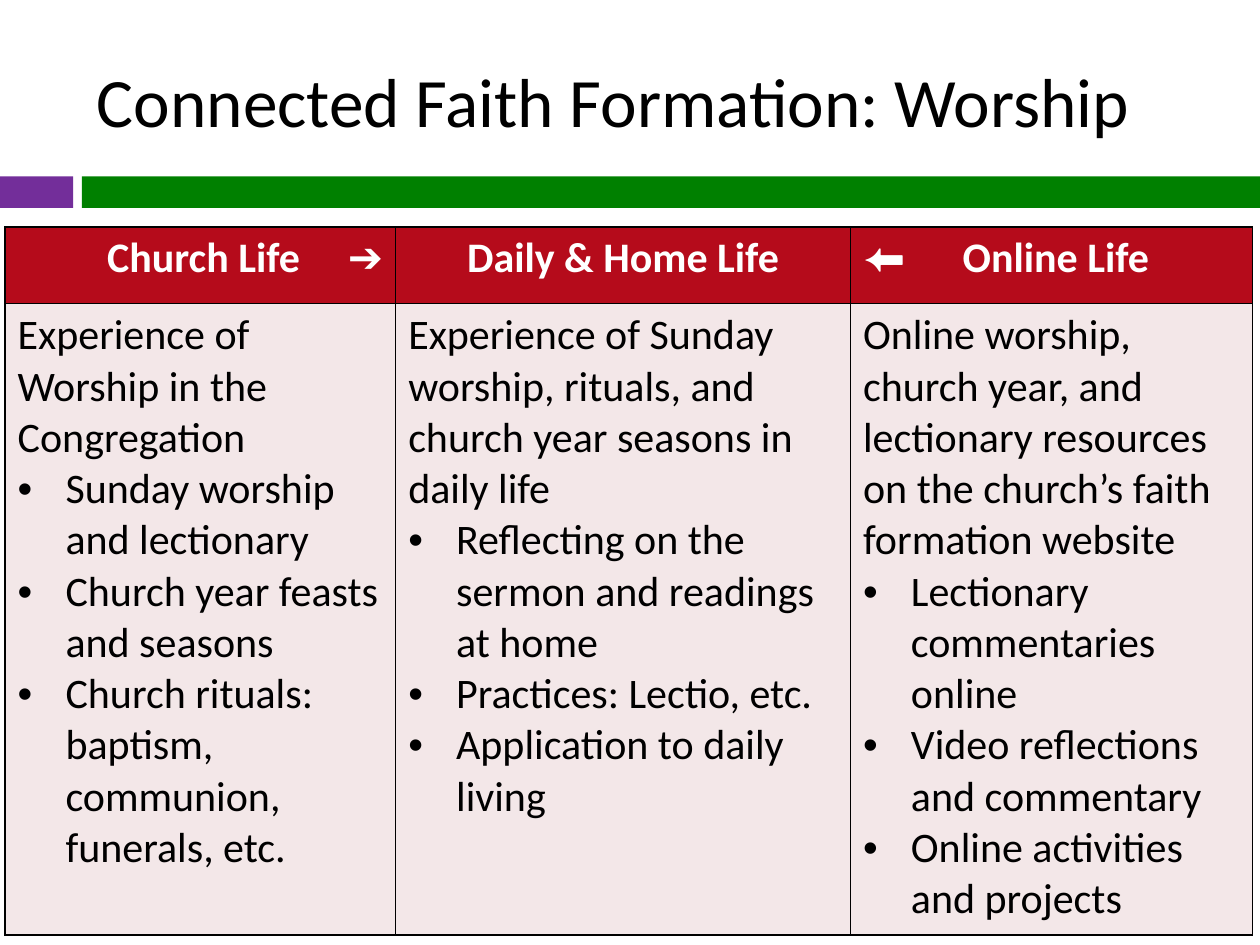
from lxml import etree
from pptx import Presentation
from pptx import util as u
from pptx.dml.color import RGBColor
from pptx.enum import shapes, text
from pptx.oxml import ns

FONT = "Calibri"
COLORS = {
    "purple": "732E9A", "green": "008000", "red": "B50B1B",
    "pink": "F3E7E8", "black": "000000", "white": "FFFFFF",
}
WIDTH, HEIGHT = u.Inches(10), u.Inches(7.5)
COLUMN_WIDTHS = [3.1, 3.61, 3.19]
ROW_HEIGHTS = [0.61, 5.01]
INDENT = 0.38

# Each heading: text, alignment, tab stops in inches
HEADINGS = [
    ("\tChurch Life\t➔", text.PP_ALIGN.LEFT, [0.71, 2.62]),
    ("Daily & Home Life", text.PP_ALIGN.CENTER, []),
    ("⬅\tOnline Life", text.PP_ALIGN.LEFT, [0.79]),
]
# Each column: introduction, then bullets
COLUMNS = [
    ["Experience of Worship in the Congregation",
     "Sunday worship and lectionary",
     "Church year feasts and seasons",
     "Church rituals: baptism, communion, funerals, etc."],
    ["Experience of Sunday worship, rituals, and church year seasons in daily life",
     "Reflecting on the sermon and readings at home",
     "Practices: Lectio, etc.",
     "Application to daily living"],
    ["Online worship, church year, and lectionary resources on the church’s "
     "faith formation website",
     "Lectionary commentaries online",
     "Video reflections and commentary",
     "Online activities and projects"],
]


def rgb(name):
    return RGBColor.from_string(COLORS[name])


def add_xml(parent, tag, **attributes):
    return etree.SubElement(parent, ns.qn(tag), attributes)


def style(paragraph, size, color, bold=False):
    font = paragraph.font
    font.name, font.size, font.bold = FONT, u.Pt(size), bold
    font.color.rgb = rgb(color)


def add_bar(slide, left, width, color):
    """Add a section of the band below the title; left and width are shares."""
    bar = slide.shapes.add_shape(
        shapes.MSO_SHAPE.RECTANGLE, int(WIDTH * left), u.Inches(1.4),
        int(WIDTH * width), u.Inches(0.25))
    bar.shadow.inherit = False
    bar.fill.solid()
    bar.fill.fore_color.rgb = rgb(color)
    bar.line.fill.background()


def add_title(slide, wording):
    box = slide.shapes.add_textbox(
        u.Inches(0.67), u.Inches(0.25), u.Inches(8.92), u.Inches(1.08))
    frame = box.text_frame
    frame.word_wrap = True
    frame.vertical_anchor = text.MSO_ANCHOR.MIDDLE
    frame.text = wording
    style(frame.paragraphs[0], 39.6, "black")


def format_cell(cell, color):
    """Draw the four borders, then fill the cell."""
    properties = cell._tc.get_or_add_tcPr()
    for side in ("L", "R", "T", "B"):
        line = add_xml(properties, f"a:ln{side}", w=str(u.Pt(1)))
        add_xml(add_xml(line, "a:solidFill"), "a:srgbClr", val=COLORS["black"])
    cell.fill.solid()
    cell.fill.fore_color.rgb = rgb(color)


def add_tabs(paragraph, stops):
    tabs = add_xml(paragraph._p.get_or_add_pPr(), "a:tabLst")
    for stop in stops:
        add_xml(tabs, "a:tab", pos=str(u.Inches(stop)), algn="l")


def add_bullet(paragraph):
    properties = paragraph._p.get_or_add_pPr()
    properties.set("marL", str(u.Inches(INDENT)))
    properties.set("indent", str(-u.Inches(INDENT)))
    add_xml(properties, "a:buFont", typeface="Arial")
    add_xml(properties, "a:buChar", char="•")


def fill_heading(cell, wording, alignment, stops):
    format_cell(cell, "red")
    cell.text = wording
    paragraph = cell.text_frame.paragraphs[0]
    paragraph.alignment = alignment
    if stops:
        add_tabs(paragraph, stops)
    style(paragraph, 24, "white", bold=True)


def fill_body(cell, lines):
    format_cell(cell, "pink")
    cell.text = "\n".join(lines)
    for index, paragraph in enumerate(cell.text_frame.paragraphs):
        if index > 0:
            add_bullet(paragraph)
        style(paragraph, 24, "black")


def add_life_table(slide):
    table = slide.shapes.add_table(
        len(ROW_HEIGHTS), len(COLUMN_WIDTHS), u.Inches(0.04), u.Inches(1.8),
        u.Inches(sum(COLUMN_WIDTHS)), u.Inches(sum(ROW_HEIGHTS))).table
    for column, width in zip(table.columns, COLUMN_WIDTHS):
        column.width = u.Inches(width)
    for row, height in zip(table.rows, ROW_HEIGHTS):
        row.height = u.Inches(height)
    for index, (heading, lines) in enumerate(zip(HEADINGS, COLUMNS)):
        fill_heading(table.cell(0, index), *heading)
        fill_body(table.cell(1, index), lines)


def main():
    presentation = Presentation()
    presentation.slide_width, presentation.slide_height = WIDTH, HEIGHT
    slide = presentation.slides.add_slide(presentation.slide_layouts[6])

    # Band and title
    add_bar(slide, 0, 0.058, "purple")
    add_bar(slide, 0.065, 0.935, "green")
    add_title(slide, "Connected Faith Formation: Worship")

    # Three settings of worship
    add_life_table(slide)

    presentation.save("out.pptx")


if __name__ == "__main__":
    main()
